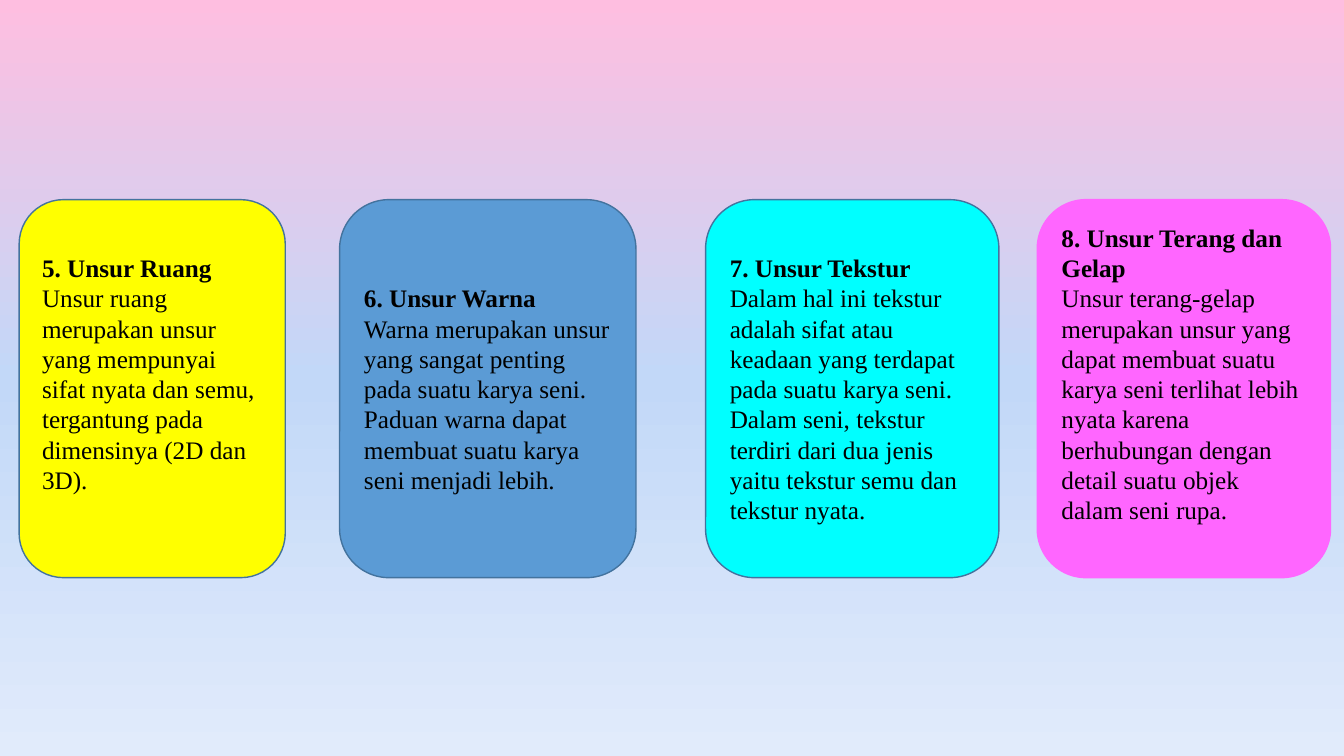
"""Build a slide with four cards on the elements of visual art."""
from lxml import etree
from pptx import Presentation
from pptx.dml.color import RGBColor
from pptx.enum.shapes import MSO_SHAPE
from pptx.enum.text import MSO_ANCHOR, PP_ALIGN
from pptx.oxml.ns import qn
from pptx.util import Pt

BLACK = RGBColor(0x00, 0x00, 0x00)
YELLOW = RGBColor(0xFF, 0xFF, 0x00)
BLUE = RGBColor(0x5B, 0x9B, 0xD5)
CYAN = RGBColor(0x00, 0xFF, 0xFF)
MAGENTA = RGBColor(0xFF, 0x66, 0xFF)
OUTLINE = RGBColor(0x43, 0x73, 0x9E)
SKY_STOPS = [
    (0, RGBColor(0xFE, 0xBE, 0xE0)),
    (50, RGBColor(0xC2, 0xD8, 0xF8)),
    (100, RGBColor(0xE1, 0xEB, 0xFB)),
]
FONT = "Times New Roman"
CARD_TOP, CARD_HEIGHT = 142.6, 270
INSET = 3.6
RAISED_INSET = 25.2

CARDS = [
    (13.7, 190.1, YELLOW, OUTLINE, RAISED_INSET, "5. Unsur Ruang",
     "Unsur ruang merupakan unsur yang mempunyai sifat nyata dan semu, "
     "tergantung pada dimensinya (2D dan 3D)."),
    (242.6, 211.7, BLUE, OUTLINE, INSET, "6. Unsur Warna",
     "Warna merupakan unsur yang sangat penting pada suatu karya seni. "
     "Paduan warna dapat membuat suatu karya seni menjadi lebih."),
    (504, 209.5, CYAN, OUTLINE, INSET, "7. Unsur Tekstur",
     "Dalam hal ini tekstur adalah sifat atau keadaan yang terdapat pada "
     "suatu karya seni. Dalam seni, tekstur terdiri dari dua jenis yaitu "
     "tekstur semu dan tekstur nyata."),
    (740.9, 209.5, MAGENTA, MAGENTA, RAISED_INSET, "8. Unsur Terang dan Gelap",
     "Unsur terang-gelap merupakan unsur yang dapat membuat suatu karya seni "
     "terlihat lebih nyata karena berhubungan dengan detail suatu objek dalam "
     "seni rupa."),
]

prs = Presentation()
prs.slide_width, prs.slide_height = Pt(960), Pt(540)
s = prs.slides.add_slide(prs.slide_layouts[6])

fill = s.background.fill
fill.gradient()
fill.gradient_angle = 270
stops = s.background._cSld.find(".//" + qn("a:gsLst"))
for stop in list(stops):
    stops.remove(stop)
for percent, color in SKY_STOPS:
    stop = etree.SubElement(stops, qn("a:gs"), pos=str(percent * 1000))
    etree.SubElement(stop, qn("a:srgbClr"), val=str(color))

for left, width, color, outline, bottom_inset, title, body in CARDS:
    sp = s.shapes.add_shape(MSO_SHAPE.ROUNDED_RECTANGLE, Pt(left), Pt(CARD_TOP),
                            Pt(width), Pt(CARD_HEIGHT))
    sp.shadow.inherit = False
    sp.fill.solid()
    sp.fill.fore_color.rgb = color
    sp.line.color.rgb = outline
    sp.line.width = Pt(1)
    tf = sp.text_frame
    tf.word_wrap = True
    tf.vertical_anchor = MSO_ANCHOR.MIDDLE
    tf.margin_top, tf.margin_bottom = Pt(INSET), Pt(bottom_inset)
    tf.text = f"{title}\n{body}"
    for p, bold in zip(tf.paragraphs, (True, False)):
        p.alignment = PP_ALIGN.LEFT
        font = p.runs[0].font
        font.name, font.size, font.bold = FONT, Pt(18), bold
        font.color.rgb = BLACK

prs.save("out.pptx")
